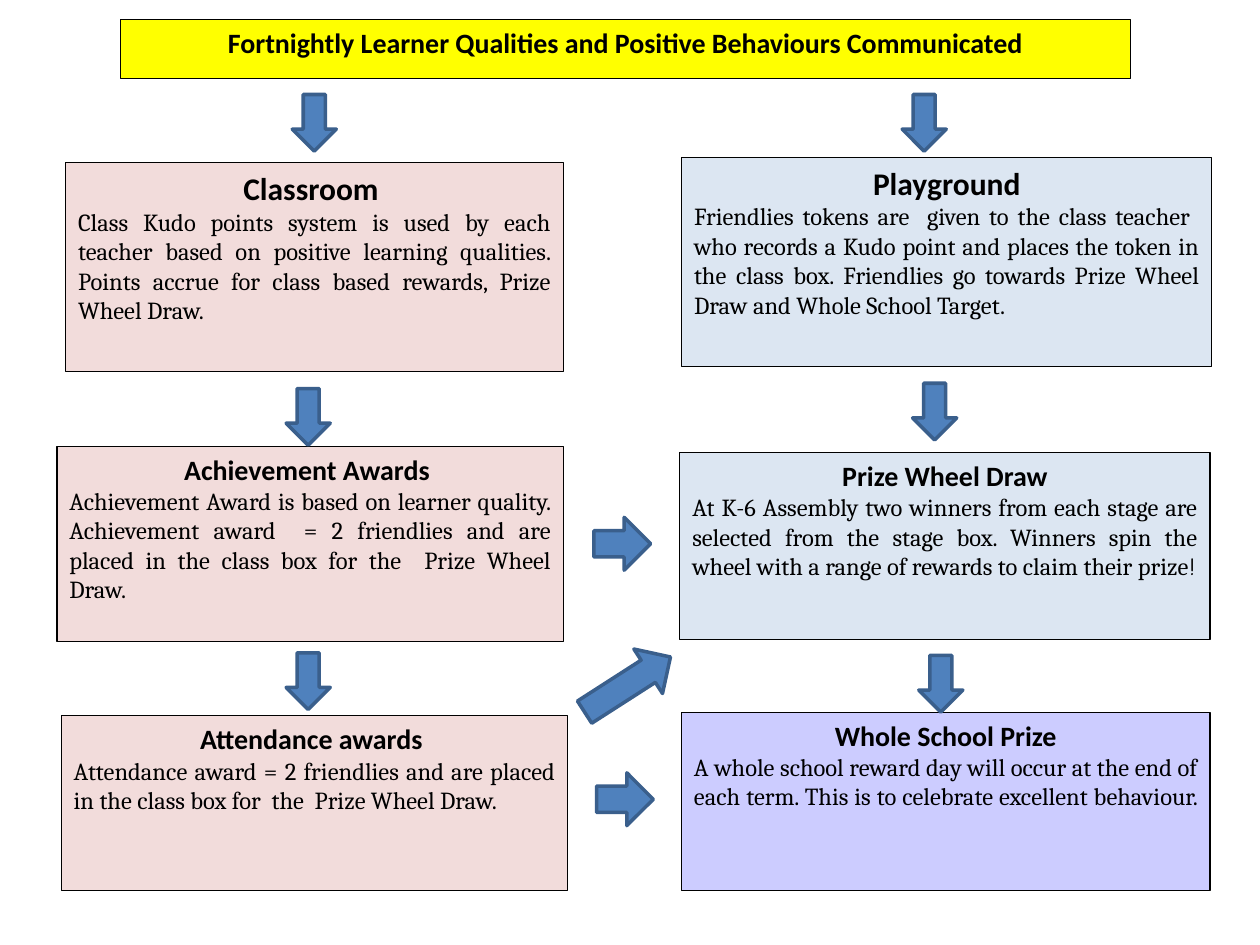
from pptx import Presentation
from pptx.dml.color import RGBColor
from pptx.enum.shapes import MSO_SHAPE as Shape
from pptx.enum.text import MSO_ANCHOR as Anchor, MSO_AUTO_SIZE as Fit, PP_ALIGN as Align
from pptx.util import Pt

COLORS = {
    "black": "000000",
    "yellow": "FFFF00",
    "pink": "F2DCDB",
    "blue": "DCE6F2",
    "violet": "CCCCFF",
    "arrow": "4F81BD",
    "edge": "3A5F8C",
}


class Board:
    """Holds the style and the current slide; all lengths are in points."""

    head = "Calibri"
    body = "Cambria"
    size = 14

    def __init__(self, slide):
        self.slide = slide

    def color(self, name):
        return RGBColor.from_string(COLORS[name])

    def paint(self, shape, fill, line, width):
        shape.fill.solid()
        shape.fill.fore_color.rgb = self.color(fill)
        shape.line.color.rgb = self.color(line)
        shape.line.width = Pt(width)

    def label(self, para, text, font, size, align, bold=False):
        para.alignment = align
        para.font.name = font
        para.font.size = Pt(size)
        para.font.bold = bold
        para.font.color.rgb = self.color("black")
        para.add_run().text = text

    def frame(self, shape):
        """Prepare a shape's text to wrap from the top."""
        text = shape.text_frame
        text.word_wrap = True
        text.auto_size = Fit.NONE
        text.vertical_anchor = Anchor.TOP
        return text

    def title(self, text, x, y, w, h):
        shape = self.slide.shapes.title
        shape.left, shape.top, shape.width, shape.height = map(Pt, (x, y, w, h))
        self.paint(shape, "yellow", "black", 0.75)
        para = self.frame(shape).paragraphs[0]
        self.label(para, text, self.head, 16, Align.CENTER, True)

    def shape(self, kind, x, y, w, h):
        shape = self.slide.shapes.add_shape(kind, *map(Pt, (x, y, w, h)))
        shape.shadow.inherit = False
        return shape

    def card(self, box, fill, size, head, body):
        shape = self.shape(Shape.RECTANGLE, *box)
        self.paint(shape, fill, "black", 0.75)
        text = self.frame(shape)
        self.label(text.paragraphs[0], head, self.head, size, Align.CENTER, True)
        para = text.add_paragraph()
        self.label(para, body, self.body, self.size, Align.JUSTIFY)
        return para

    def arrow(self, x, y, w=25.2, h=32.4, turn=0):
        shape = self.shape(Shape.DOWN_ARROW, x, y, w, h)
        shape.rotation = turn
        self.paint(shape, "arrow", "edge", 2)


def main():
    deck = Presentation()
    deck.slide_width, deck.slide_height = Pt(720), Pt(540)
    board = Board(deck.slides.add_slide(deck.slide_layouts[5]))

    board.title("Fortnightly Learner Qualities and Positive Behaviours Communicated",
                69, 11, 577, 34)

    board.card((37.5, 93, 284.5, 119.5), "pink", 18, "Classroom ",
               "Class Kudo points system is used by each teacher based on positive "
               "learning qualities. Points accrue for class based rewards, Prize "
               "Wheel Draw.")
    board.card((389.5, 90, 303, 119.5), "blue", 18, "Playground",
               "Friendlies tokens are  given to the class teacher  who records a "
               "Kudo point and places the token in the class box. Friendlies go "
               "towards Prize Wheel Draw and Whole School Target.")
    board.card((32.5, 255, 289.5, 111.5), "pink", 16, "Achievement Awards ",
               "Achievement Award is based on learner quality. Achievement award  "
               "= 2 friendlies and are placed in the class box for the  Prize "
               "Wheel Draw.")
    prize = board.card((388.5, 258.5, 303, 107), "blue", 16, "Prize Wheel Draw",
                       "At K-6 Assembly two winners from each stage are selected "
                       "from the stage box. Winners spin the wheel with a range of "
                       "rewards to claim their prize")
    mark = prize.add_run()
    mark.text = "!"
    mark.font.name = "Comic Neue"
    board.card((35, 409, 289.5, 100), "pink", 16, "Attendance awards ",
               "Attendance award = 2 friendlies and are placed in the class box "
               "for  the  Prize Wheel Draw.")
    board.card((389.5, 407, 302, 102), "violet", 16, "Whole School Prize",
               "A whole school reward day will occur at the end of each term. "
               "This is to celebrate excellent behaviour. ")

    downs = [(515.5, 54), (167, 54), (521.5, 219), (525, 374.5),
             (163.5, 222), (163.5, 373)]
    for x, y in downs:
        board.arrow(x, y)
    for x, y in [(340.5, 294.5), (342, 440.5)]:
        board.arrow(x, y, w=30.2, turn=270)
    board.arrow(343.5, 362, w=30.2, h=58.3, turn=237.3)

    deck.save("out.pptx")


if __name__ == "__main__":
    main()
